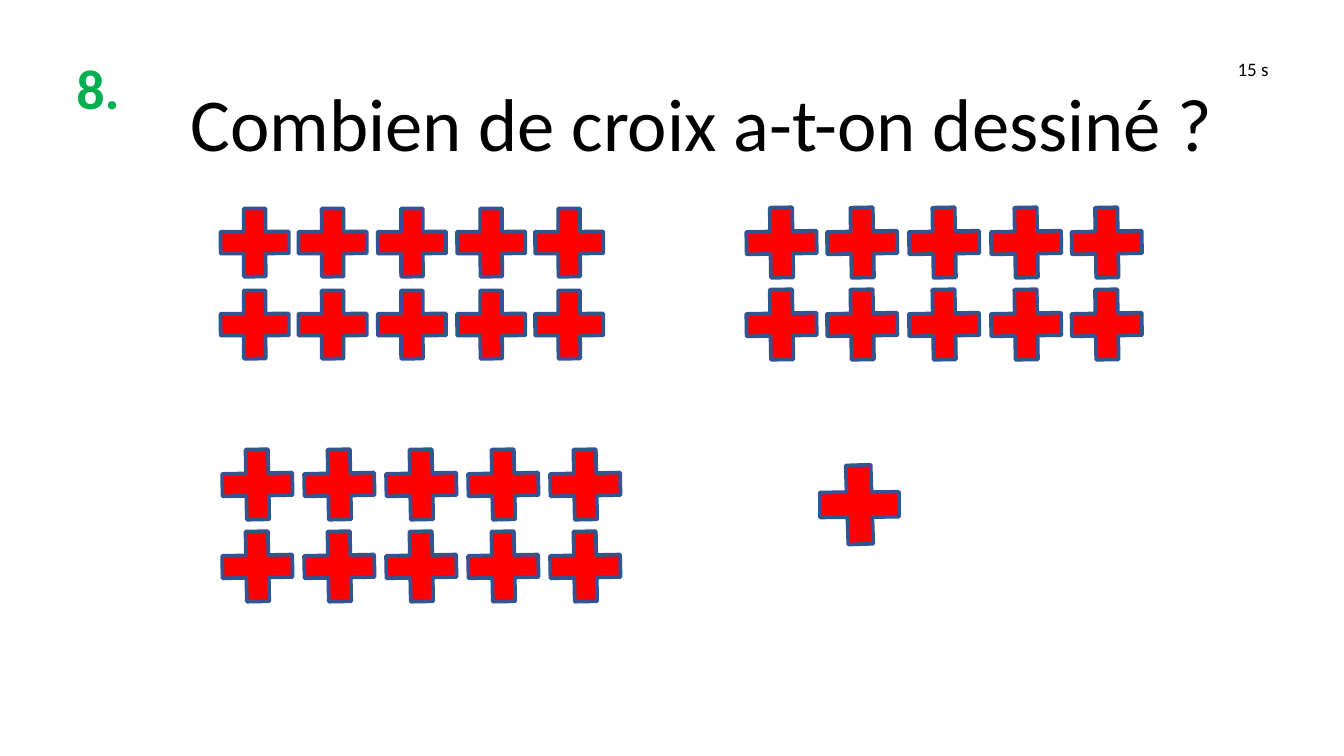
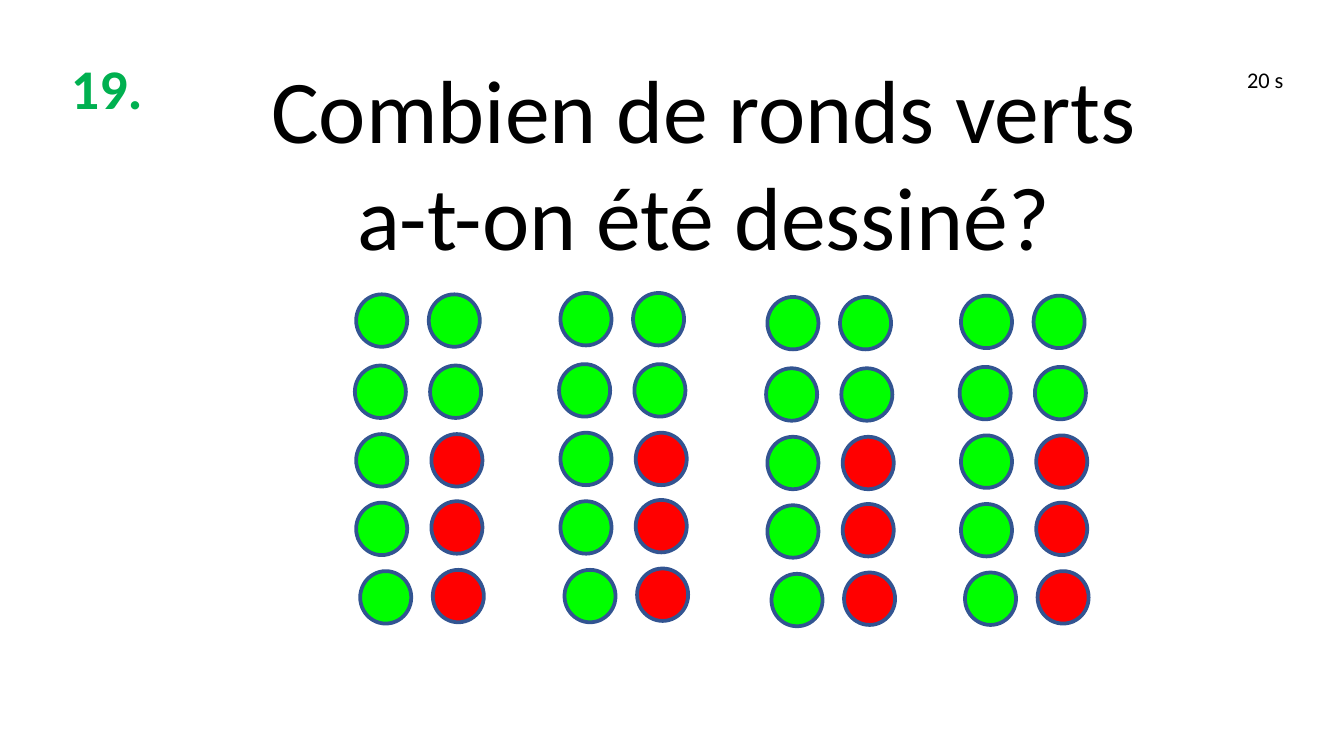
from pptx import Presentation
from pptx import util as u
from pptx.dml.color import RGBColor
from pptx.enum import shapes, text

PX = 9144  # EMU in one px, 100 px to the inch
WIDE = 1000 * PX
HIGH = WIDE * 9 // 16
FONT = "Calibri"
HUES = {
    "black": "000000",
    "number": "00B050",
    "green": "00FF00",
    "red": "FF0000",
    "edge": "325491",
}
STYLES = {
    "number": {"size": u.Pt(30), "bold": True},
    "small": {"size": u.Pt(10.2)},
    "timer": {"size": u.Pt(12)},
    "title": {"size": u.Pt(40)},
    "large": {"size": u.Pt(48)},
}
LEFT, MID = text.PP_ALIGN.LEFT, text.PP_ALIGN.CENTER

# left, top, span of the five columns, size, turn
CROSSES = [
    (155, 146, 234, 69, 44.8),
    (546, 145, 242, 71, 44),
    (156, 325, 244, 71, 43.9),
]
ROW = 61

DOTS = [(417, 218), (571, 221), (715, 220), (265, 219)]
# left and top offset, colour, from top to bottom of each column
PAIRS = [
    (0, 0, "green"), (-1, 53, "green"), (0, 104, "green"),
    (0, 155, "green"), (3, 206, "green"),
    (54, 0, "green"), (55, 53, "green"), (56, 104, "red"),
    (56, 154, "red"), (57, 205, "red"),
]


def hue(name):
    return RGBColor.from_string(HUES[name])


def emu(*box):
    return [px * PX for px in box]


def label(slide, box, lines, style, color="black", align=LEFT, wrap=True):
    frame = slide.shapes.add_textbox(*emu(*box)).text_frame
    frame.word_wrap = wrap
    frame.text = "\n".join(lines)
    for para in frame.paragraphs:
        para.alignment = align
        font = para.runs[0].font
        for key, value in {"name": FONT, **STYLES[style]}.items():
            setattr(font, key, value)
        font.color.rgb = hue(color)


def mark(holder, kind, box, color):
    """Add one outlined shape to a slide or a group."""
    shape = holder.shapes.add_shape(kind, *emu(*box))
    shape.shadow.inherit = False
    shape.fill.solid()
    shape.fill.fore_color.rgb = hue(color)
    shape.line.color.rgb = hue("edge")
    shape.line.width = u.Pt(2)
    return shape


def cross(holder, box, turn):
    shape = mark(holder, shapes.MSO_SHAPE.MATH_MULTIPLY, box, "red")
    shape.adjustments[0] = 0.235
    shape.rotation = turn


def ten(slide, left, top, span, size, turn):
    """Group two rows of five crosses."""
    group = slide.shapes.add_group_shape()
    for row in range(2):
        for col in range(5):
            x = left + round(col * span / 4)
            cross(group, (x, top + row * ROW, size, size), turn)


def dots(slide, left, top):
    """Group two columns of five dots."""
    group = slide.shapes.add_group_shape()
    for dx, dy, color in PAIRS:
        box = (left + dx, top + dy, 38, 39)
        mark(group, shapes.MSO_SHAPE.FLOWCHART_CONNECTOR, box, color)


def page(deck, number, box):
    slide = deck.slides.add_slide(deck.slide_layouts[6])
    label(slide, box, [number], "number", "number", wrap=False)
    return slide


def main():
    deck = Presentation()
    deck.slide_width, deck.slide_height = WIDE, HIGH

    slide = page(deck, "8.", (47, 35, 64, 60))
    label(slide, (911, 38, 58, 27), ["15 s"], "small")
    label(slide, (132, 52, 783, 130),
          ["Combien de croix a-t-on dessiné ?"], "title")
    first, *others = CROSSES
    ten(slide, *first)
    cross(slide, (599, 336, 81, 79), 43.8)
    for block in others:
        ten(slide, *block)

    slide = page(deck, "19.", (43, 35, 93, 60))
    label(slide, (918, 44, 58, 27), ["20 s"], "timer")
    label(slide, (189, 35, 669, 210),
          ["Combien de ronds verts", "a-t-on été dessiné?"],
          "large", align=MID)
    for spot in DOTS:
        dots(slide, *spot)

    deck.save("out.pptx")


if __name__ == "__main__":
    main()
